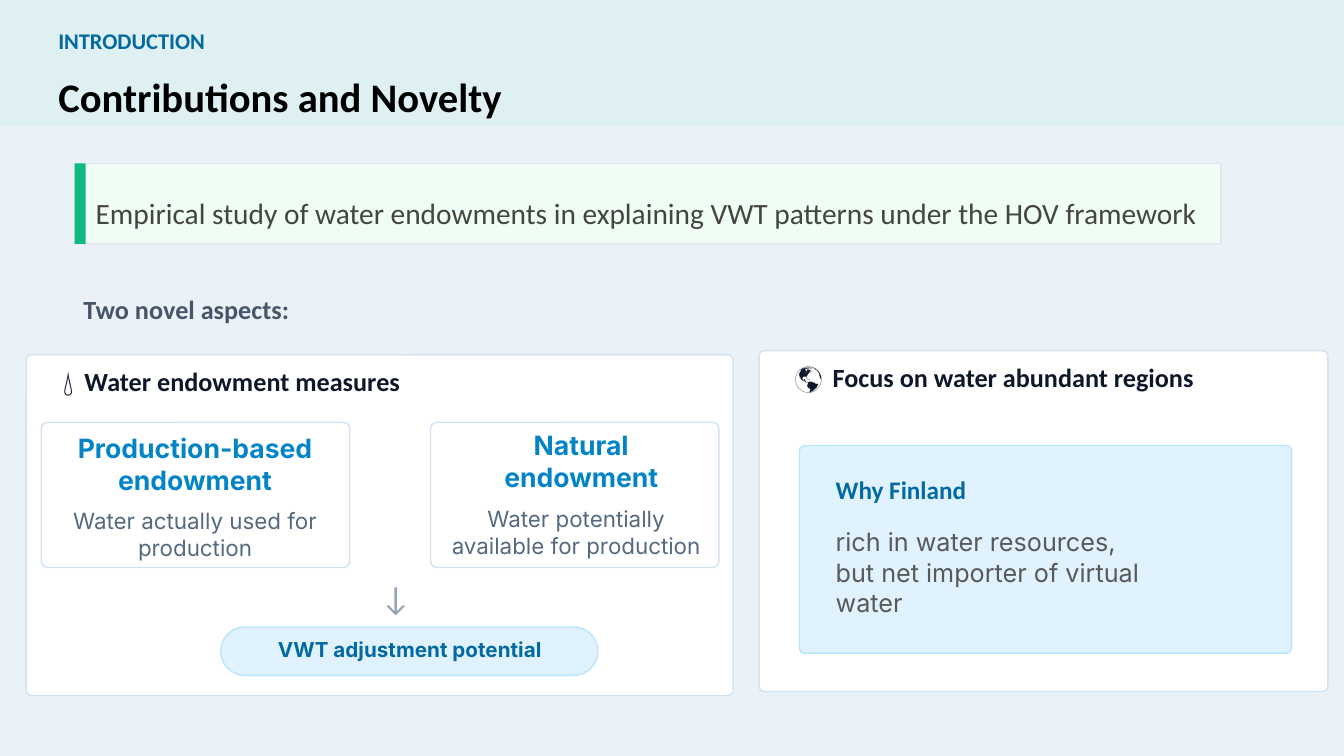
from dataclasses import dataclass
from typing import Optional

import lxml.etree
import pptx
import pptx.dml.color
import pptx.enum.shapes
import pptx.enum.text
import pptx.oxml.ns
import pptx.slide
import pptx.util

Inches = pptx.util.Inches
Anchor = pptx.enum.text.MSO_ANCHOR
Align = pptx.enum.text.PP_ALIGN


@dataclass(frozen=True)
class Theme:
    background: str = "EAF2F8"
    header: str = "DEF0F2"
    callout: str = "F0FDF4"
    callout_border: str = "E2E8F0"
    accent: str = "10B981"
    card: str = "FFFFFF"
    card_border: str = "D1E2F2"
    highlight: str = "E0F2FE"
    highlight_border: str = "BAE6FD"
    black: str = "000000"
    heading: str = "0F172A"
    slate: str = "475569"
    muted: str = "556980"
    arrow: str = "94A3B8"
    blue: str = "0284C7"
    deep_blue: str = "0369A1"
    body: str = "444444"
    grey: str = "595959"
    serifless: str = "Calibri"
    display: str = "Inter"
    title_size: float = 29
    arrow_size: float = 24
    callout_size: float = 21
    measure_size: float = 19
    heading_size: float = 18.7
    body_size: float = 18
    small_size: float = 16
    pill_size: float = 14.7


THEME = Theme()


@dataclass(frozen=True)
class Box:
    left: float
    top: float
    width: float
    height: float
    fill: str
    border: Optional[str] = None
    rounding: Optional[float] = None


@dataclass(frozen=True)
class Label:
    left: float
    top: float
    width: float
    height: float
    text: str
    size: float
    color: str
    font: str = THEME.serifless
    bold: bool = False
    centered: bool = False
    tab: Optional[float] = None
    grows: bool = False
    spacing: Optional[float] = None


def card(left: float, top: float, width: float, height: float, rounding: float) -> Box:
    return Box(left, top, width, height, THEME.card, THEME.card_border, rounding)


def highlight(left: float, top: float, width: float, height: float, rounding: float) -> Box:
    return Box(left, top, width, height, THEME.highlight, THEME.highlight_border, rounding)


def panel_heading(left: float, top: float, text: str, tab: float) -> Label:
    return Label(left, top, 7.07, 0.53, text, THEME.heading_size, THEME.heading,
                 bold=True, tab=tab)


def measure_name(left: float, top: float, text: str) -> Label:
    return Label(left, top, 2.93, 0.53, text, THEME.measure_size, THEME.blue,
                 THEME.display, bold=True, centered=True)


def measure_detail(left: float, top: float, width: float, text: str) -> Label:
    return Label(left, top, width, 0.8, text, THEME.small_size, THEME.muted,
                 THEME.display, centered=True)


BOXES = [
    Box(0, 0, 13.33, 1.25, THEME.header),
    Box(0.74, 1.62, 11.37, 0.8, THEME.callout, THEME.callout_border),
    Box(0.74, 1.62, 0.11, 0.8, THEME.accent),
    card(0.26, 3.52, 7.01, 3.38, 0.015),
    card(0.41, 4.19, 3.06, 1.44, 0.045),
    card(4.27, 4.19, 2.86, 1.44, 0.045),
    highlight(2.19, 6.22, 3.74, 0.48, 0.5),
    card(7.53, 3.48, 5.64, 3.38, 0.015),
    highlight(7.93, 4.42, 4.88, 2.06, 0.025),
]

LABELS = [
    Label(0.48, 0.25, 2.43, 0.3, "INTRODUCTION", THEME.small_size, THEME.deep_blue, bold=True),
    Label(0.48, 0.66, 9.98, 0.59, "Contributions and Novelty", THEME.title_size, THEME.black,
          bold=True, grows=True),
    Label(0.85, 1.71, 12.26, 0.58,
          "Empirical study of water endowments in explaining VWT patterns under the HOV framework",
          THEME.callout_size, THEME.body, grows=True, spacing=1.5),
    Label(0.73, 2.8, 3.56, 0.53, "Two novel aspects:", THEME.heading_size, THEME.slate, bold=True),
    panel_heading(0.53, 3.52, "💧\tWater endowment measures", 0.21),
    measure_name(0.47, 4.34, "Production-based\nendowment"),
    measure_detail(0.35, 4.9, 3.17, "Water actually used for production"),
    measure_name(4.3, 4.31, "Natural\nendowment"),
    measure_detail(4.25, 4.88, 2.93, "Water potentially available for production"),
    Label(3.59, 5.66, 0.67, 0.53, "↓", THEME.arrow_size, THEME.arrow, centered=True),
    Label(2, 6.11, 4.13, 0.67, "VWT adjustment potential", THEME.pill_size, THEME.deep_blue,
          THEME.display, bold=True, centered=True),
    panel_heading(7.79, 3.48, "🌎\tFocus on water abundant regions", 0.37),
    Label(8.19, 4.59, 3.75, 0.53, "Why Finland", THEME.body_size, THEME.deep_blue, bold=True),
    Label(8.19, 5.01, 3.93, 1.33, "rich in water resources,\nbut net importer of virtual water",
          THEME.body_size, THEME.grey, THEME.display),
]


def rgb(color: str) -> pptx.dml.color.RGBColor:
    return pptx.dml.color.RGBColor.from_string(color)


def draw_box(slide: pptx.slide.Slide, box: Box) -> None:
    kinds = pptx.enum.shapes.MSO_SHAPE
    kind = kinds.RECTANGLE if box.rounding is None else kinds.ROUNDED_RECTANGLE
    shape = slide.shapes.add_shape(kind, Inches(box.left), Inches(box.top),
                                   Inches(box.width), Inches(box.height))
    shape.shadow.inherit = False
    if box.rounding is not None:
        shape.adjustments[0] = box.rounding
    shape.fill.solid()
    shape.fill.fore_color.rgb = rgb(box.fill)
    if box.border is None:
        shape.line.fill.background()
    else:
        shape.line.color.rgb = rgb(box.border)
        shape.line.width = pptx.util.Pt(1)


def draw_label(slide: pptx.slide.Slide, label: Label) -> None:
    shape = slide.shapes.add_textbox(Inches(label.left), Inches(label.top),
                                     Inches(label.width), Inches(label.height))
    text_frame = shape.text_frame
    text_frame.word_wrap = True
    text_frame.vertical_anchor = Anchor.TOP if label.grows else Anchor.MIDDLE
    if label.grows:
        text_frame.auto_size = pptx.enum.text.MSO_AUTO_SIZE.SHAPE_TO_FIT_TEXT
    text_frame.text = label.text
    for paragraph in text_frame.paragraphs:
        if label.tab is not None:
            properties = paragraph._p.get_or_add_pPr()
            qualified = pptx.oxml.ns.qn
            tabs = lxml.etree.SubElement(properties, qualified("a:tabLst"))
            lxml.etree.SubElement(tabs, qualified("a:tab"), pos=str(Inches(label.tab)), algn="l")
        paragraph.alignment = Align.CENTER if label.centered else Align.LEFT
        if label.spacing is not None:
            paragraph.line_spacing = label.spacing
        for run in paragraph.runs:
            run.font.name = label.font
            run.font.size = pptx.util.Pt(label.size)
            run.font.bold = label.bold
            run.font.color.rgb = rgb(label.color)


def main() -> None:
    presentation = pptx.Presentation()
    presentation.slide_width = Inches(13.33)
    presentation.slide_height = Inches(7.5)
    slide = presentation.slides.add_slide(presentation.slide_layouts[6])
    slide.background.fill.solid()
    slide.background.fill.fore_color.rgb = rgb(THEME.background)
    for box in BOXES:
        draw_box(slide, box)
    for label in LABELS:
        draw_label(slide, label)
    presentation.save("out.pptx")


if __name__ == "__main__":
    main()
